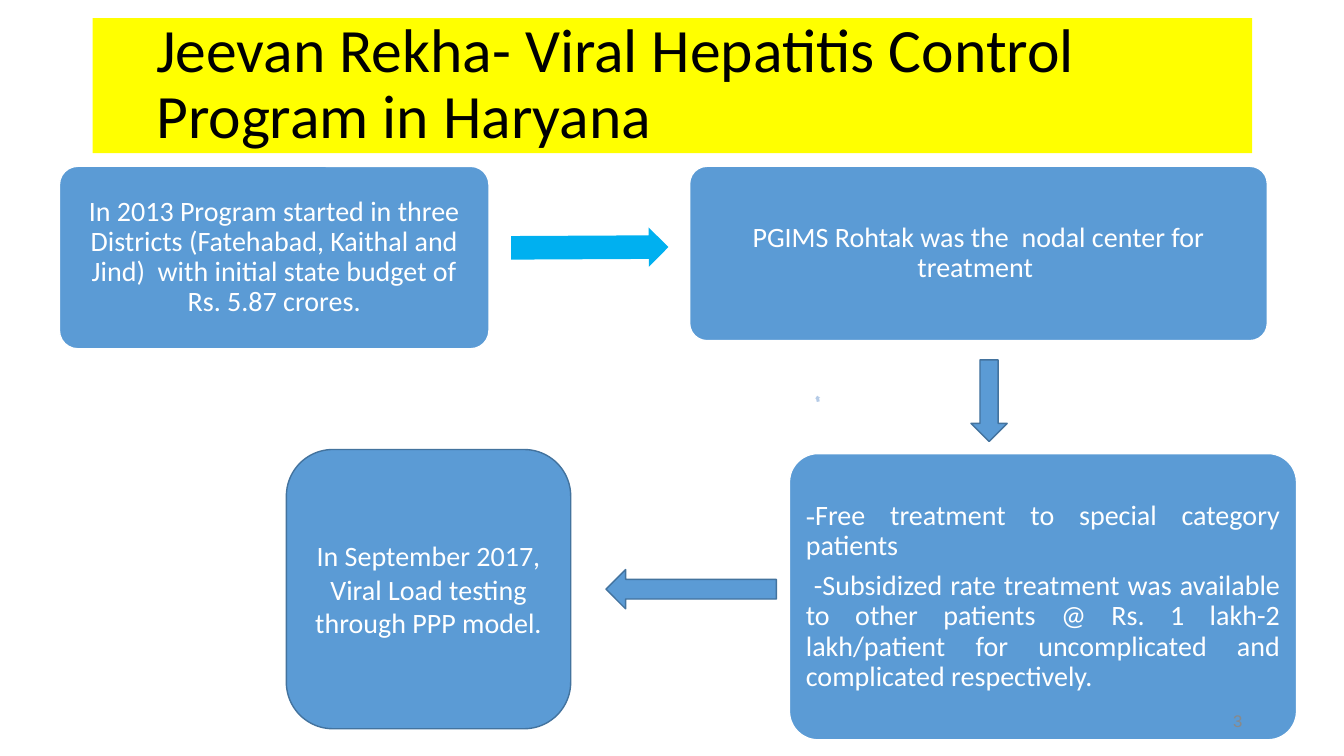
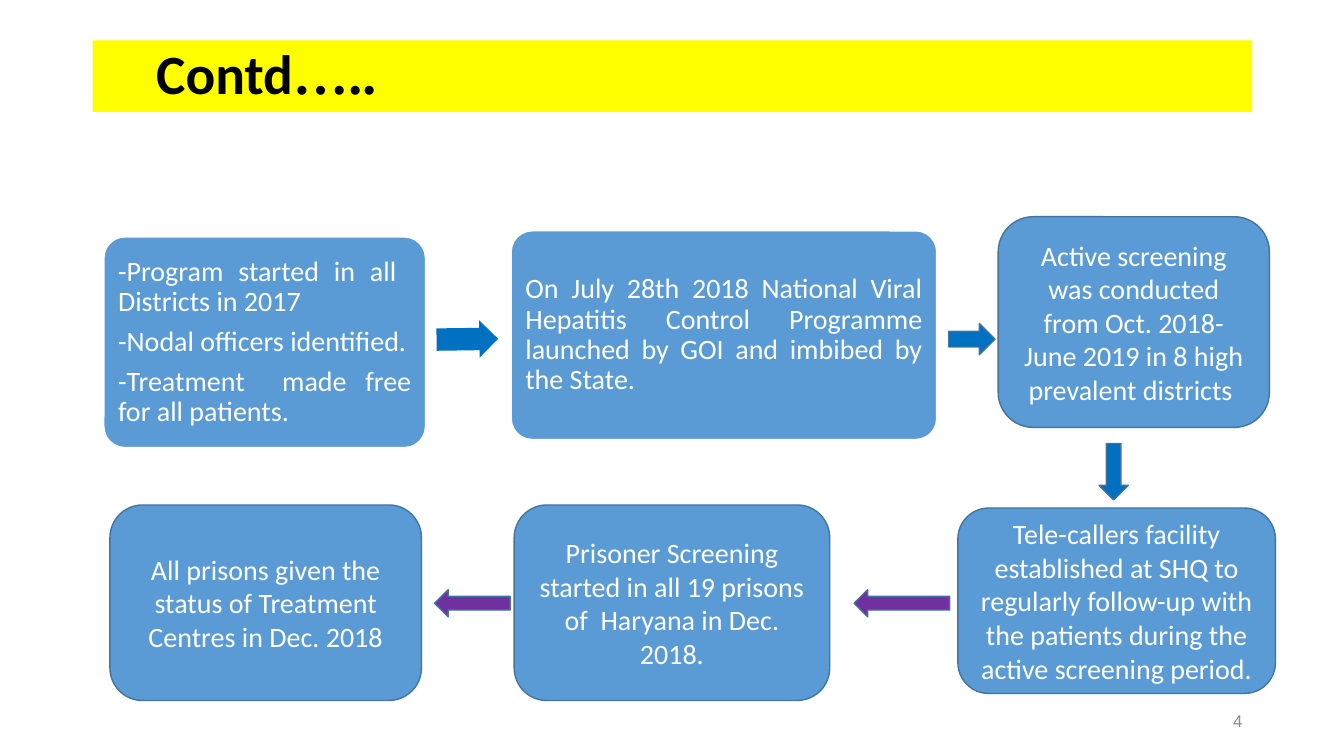
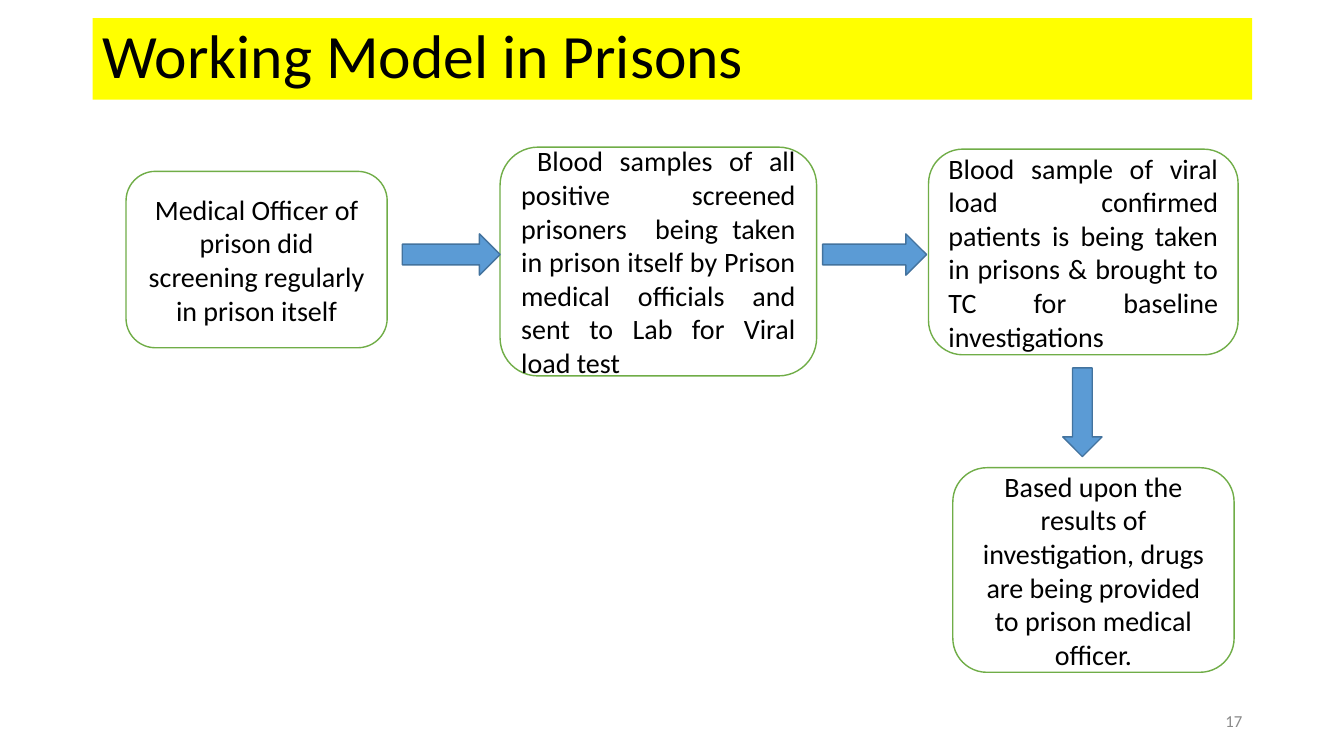
import dataclasses

import pptx
import pptx.dml.color
import pptx.enum.shapes
import pptx.enum.text
import pptx.util

PX = 9144
SHAPE = pptx.enum.shapes.MSO_SHAPE
ALIGN = pptx.enum.text.PP_ALIGN


@dataclasses.dataclass(frozen=True)
class Theme:
    """Colours, fonts and type sizes shared by the slides."""
    font: str = "Calibri"
    serif: str = "Times New Roman"
    sans: str = "Arial"
    band: str = "FFFF00"
    black: str = "000000"
    white: str = "FFFFFF"
    blue: str = "5B9BD5"
    edge: str = "43739E"
    green: str = "70AD47"
    sky: str = "00B0F0"
    deep: str = "0070C0"
    purple: str = "7030A0"
    pale: str = "B5CBE7"
    grey: str = "898989"
    title: float = 44
    subtitle: float = 39.6
    body: float = 20
    small: float = 18
    page: float = 12


T = Theme()

CARD_STYLES = {
    "soft": dict(fill=T.blue, line=T.white, adj=[0.1], color=T.white,
                 margins=(8, 8), spacing=0.9, after=7),
    "solid": dict(fill=T.blue, line=T.edge, color=T.white),
    "outline": dict(fill=T.white, line=T.green, color=T.black),
}
ARROWS = {"right": SHAPE.RIGHT_ARROW, "left": SHAPE.LEFT_ARROW, "down": SHAPE.DOWN_ARROW}


def rgb(color):
    """Turn a hex string into a colour."""
    return pptx.dml.color.RGBColor.from_string(color)


def emu(box):
    """Turn a box in px into EMU."""
    return [v * PX for v in box]


def within(region, box):
    """Place a box relative to the corner of a region."""
    return (region[0] + box[0], region[1] + box[1], box[2], box[3])


def write(sp, paras, size=T.body, color=T.black, font=T.font, bold=False,
          align=ALIGN.LEFT, spacing=None, after=0, margins=(10, 5), indent=0):
    """Fill a shape with paragraphs, each a string or a list of (text, format) runs."""
    tf = sp.text_frame
    tf.word_wrap = True
    tf.vertical_anchor = pptx.enum.text.MSO_ANCHOR.MIDDLE
    tf.margin_left, tf.margin_right = (margins[0] + indent) * PX, margins[0] * PX
    tf.margin_top = tf.margin_bottom = margins[1] * PX
    for i, para in enumerate(paras):
        p = tf.paragraphs[0] if i == 0 else tf.add_paragraph()
        p.alignment = align
        p.line_spacing = spacing
        p.space_after = pptx.util.Pt(after)
        for text, fmt in [(para, {})] if isinstance(para, str) else para:
            for j, piece in enumerate(text.split("\v")):
                if j:
                    p.add_line_break()
                r = p.add_run()
                r.text = piece
                r.font.name = fmt.get("font", font)
                r.font.size = pptx.util.Pt(fmt.get("size", size))
                r.font.bold = bold
                r.font.color.rgb = rgb(color)


def shape(s, kind, box, fill, line=None, adj=()):
    """Draw a flat preset shape."""
    sp = s.shapes.add_shape(kind, *emu(box))
    sp.shadow.inherit = False
    sp.fill.solid()
    sp.fill.fore_color.rgb = rgb(fill)
    if line:
        sp.line.color.rgb = rgb(line)
        sp.line.width = pptx.util.Pt(1)
    else:
        sp.line.fill.background()
    for i, value in enumerate(adj):
        sp.adjustments[i] = value
    return sp


def title_band(s, box, runs, **fmt):
    """Draw the yellow title band."""
    write(shape(s, SHAPE.RECTANGLE, box, T.band), [runs], spacing=0.9, **fmt)


def card(s, box, style, paras, align=ALIGN.CENTER):
    """Draw one rounded step of the flow."""
    look = dict(CARD_STYLES[style])
    sp = shape(s, SHAPE.ROUNDED_RECTANGLE, box, look.pop("fill"), look.pop("line"),
               look.pop("adj", ()))
    write(sp, paras, align=align, **look)


def arrow(s, box, way, fill=T.blue, line=T.edge, turn=None):
    """Draw a block arrow; a turned one has a thick shaft and no outline."""
    if turn is None:
        shape(s, ARROWS[way], box, fill, line)
    else:
        shape(s, ARROWS[way], box, fill, adj=(0.6, 0.5)).rotation = turn


def page_number(s, box, number, font):
    """Write the slide number at the right of its box."""
    sp = s.shapes.add_textbox(*emu(box))
    write(sp, [number], size=T.page, color=T.grey, font=font, align=ALIGN.RIGHT)


def flow_slide(prs, band, title, region, cards, arrows, number, font=T.sans, **fmt):
    """Build a slide with a title band, a flow of cards and a slide number."""
    s = prs.slides.add_slide(prs.slide_layouts[6])
    title_band(s, (92, band[0], 1150, band[1]), title, **fmt)
    for box, *rest in cards:
        card(s, within(region, box), *rest)
    for box, way, look in arrows:
        arrow(s, within(region, box), way, **look)
    page_number(s, (942, 695, 300, 40), number, font)


def main():
    """Build the deck."""
    prs = pptx.Presentation()
    prs.slide_width, prs.slide_height = 1333 * PX, 750 * PX
    justify = ALIGN.JUSTIFY

    flow_slide(
        prs, (18, 134), "Jeevan Rekha- Viral Hepatitis Control Program in Haryana", (59, 165),
        [
            ((0, 0, 426, 181), "soft",
             ["In 2013 Program started in three Districts (Fatehabad, Kaithal and Jind)  "
              "with initial state budget of Rs. 5.87 crores."]),
            ((625, 0, 573, 173), "soft", ["PGIMS Rohtak was the  nodal center for treatment "]),
            ((724, 285, 503, 284), "soft",
             [[("-", dict(font=T.serif)),
               ("Free treatment to special category\vpatients ", {})],
              " -Subsidized rate treatment was available to other patients @ Rs. 1 lakh-2 "
              "lakh/patient for uncomplicated and complicated respectively."], justify),
            ((225, 281, 282, 277), "solid",
             ["In September 2017, Viral Load testing through PPP model."]),
        ],
        [
            ((448, 61, 156, 39), "right", dict(fill=T.sky, turn=359.7)),
            ((749, 228, 6, 5), "right", dict(fill=T.pale, turn=259.5)),
            ((904, 192, 36, 81), "down", {}),
            ((542, 400, 169, 39), "left", {}),
        ],
        "3", size=T.title, indent=53)

    flow_slide(
        prs, (40, 71), [("Contd", {}), ("…..", dict(font=T.serif))], (103, 215),
        [
            ((0, 20, 319, 209), "soft",
             ["-Program started in all  Districts in 2017", "-Nodal officers identified.",
              "-Treatment  made free for all patients."], justify),
            ((404, 14, 422, 207), "soft",
             ["On July 28th 2018 National Viral Hepatitis Control Programme launched by GOI "
              "and imbibed by the State. "], justify),
            ((887, 0, 269, 209), "solid",
             ["Active screening was conducted from Oct. 2018-June 2019 in 8 high prevalent "
              "districts "]),
            ((847, 289, 315, 184), "solid",
             ["Tele-callers facility established at SHQ to regularly follow-up with the "
              "patients during the active screening period."]),
            ((407, 286, 313, 194), "solid",
             ["Prisoner Screening started in all 19 prisons of  Haryana in Dec. 2018."]),
            ((6, 286, 309, 194), "solid",
             ["All prisons given the status of Treatment Centres in Dec. 2018"]),
        ],
        [
            ((330, 103, 61, 37), "right", dict(fill=T.deep, turn=359.2)),
            ((838, 106, 46, 31), "right", dict(fill=T.deep)),
            ((987, 225, 29, 56), "down", dict(fill=T.deep)),
            ((744, 370, 95, 27), "left", dict(fill=T.purple)),
            ((328, 370, 75, 27), "left", dict(fill=T.purple)),
        ],
        "4", size=T.subtitle, bold=True, indent=53)

    flow_slide(
        prs, (18, 81), "Working Model in Prisons", (125, 146),
        [
            ((0, 24, 259, 175), "outline",
             ["Medical Officer of prison did screening regularly in prison itself"]),
            ((371, 0, 314, 227), "outline",
             [[(" ", dict(size=T.small)),
               ("Blood samples of all positive screened prisoners  being taken in prison itself "
                "by Prison medical officials and sent to Lab for Viral load test", {})]], justify),
            ((796, 2, 307, 204), "outline",
             ["Blood sample of viral load confirmed patients is being taken in prisons & "
              "brought to TC for baseline investigations"], justify),
            ((820, 318, 279, 203), "outline",
             ["Based upon the results of investigation, drugs are being provided to prison "
              "medical officer."]),
        ],
        [
            ((274, 86, 97, 41), "right", {}),
            ((691, 86, 103, 41), "right", {}),
            ((929, 219, 39, 88), "down", {}),
        ],
        "17", font=T.font, size=T.title)

    prs.save("out.pptx")


if __name__ == "__main__":
    main()
